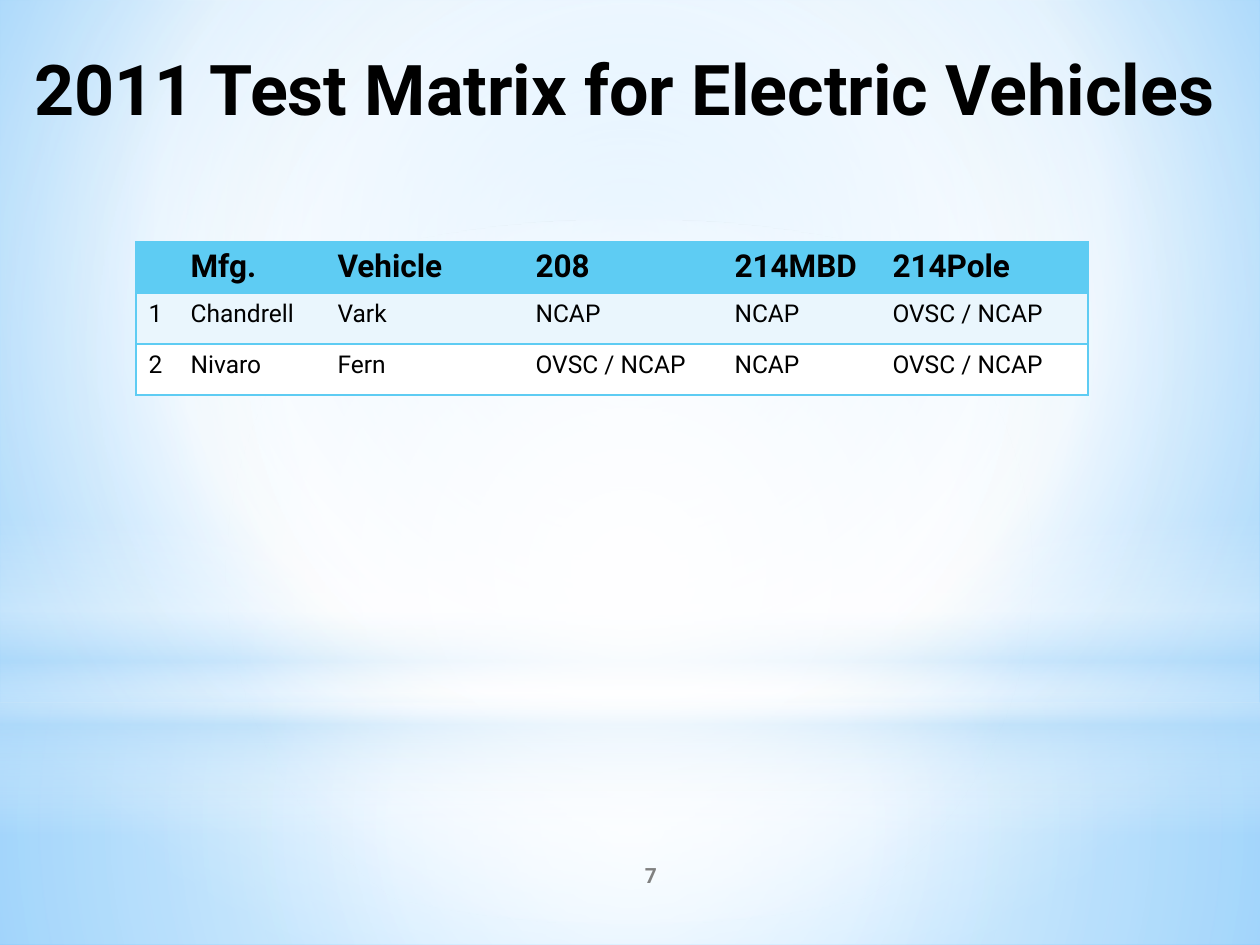
import pptx
import pptx.dml.color
import pptx.enum.shapes
import pptx.enum.text
import pptx.oxml
import pptx.oxml.ns
import pptx.util

RGBColor = pptx.dml.color.RGBColor
MSO_SHAPE = pptx.enum.shapes.MSO_SHAPE
PP_ALIGN = pptx.enum.text.PP_ALIGN
MSO_ANCHOR = pptx.enum.text.MSO_ANCHOR
qn = pptx.oxml.ns.qn
NS = pptx.oxml.ns.nsdecls("a")

BLACK = RGBColor(0x00, 0x00, 0x00)
GRAY = RGBColor(0x80, 0x80, 0x80)
WHITE = RGBColor(0xFF, 0xFF, 0xFF)
CYAN = RGBColor(0x5E, 0xCC, 0xF3)
PALE = RGBColor(0xEA, 0xF6, 0xFD)
MIST = RGBColor(0xB4, 0xDC, 0xFA)
SKY = RGBColor(0x9E, 0xD5, 0xFF)
BLUE = RGBColor(0x5B, 0xB9, 0xFF)

W, H = 1260, 945
CENTER = (50, 50, 50, 50)
COLS = (42, 147, 198, 199, 158, 208)
ROW_H = 51
ROWS = (
    ("", "Mfg.", "Vehicle", "208", "214MBD", "214Pole"),
    ("1", "Chandrell", "Vark", "NCAP", "NCAP", "OVSC / NCAP"),
    ("2", "Nivaro", "Fern", "OVSC / NCAP", "NCAP", "OVSC / NCAP"),
)


def px(n):
    return pptx.util.Emu(n * 914400 // 126)


def set_text(tf, text, size=14, bold=False, color=BLACK, align=PP_ALIGN.LEFT):
    p = tf.paragraphs[0]
    p.alignment = align
    r = p.add_run()
    r.text = text
    r.font.name = "Roboto"
    r.font.size = pptx.util.Pt(size)
    r.font.bold = bold
    r.font.color.rgb = color


def set_gradient(owner, stops, to=None):
    owner.fill.background()
    gs = "".join(
        f'<a:gs pos="{pos * 1000}"><a:srgbClr val="{color}">'
        f'<a:alpha val="{alpha * 1000}"/></a:srgbClr></a:gs>'
        for pos, color, alpha in stops
    )
    if to:
        rect = " ".join(f'{side}="{v * 1000}"' for side, v in zip("ltrb", to))
        way = f'<a:path path="circle"><a:fillToRect {rect}/></a:path>'
    else:
        way = '<a:lin ang="5400000" scaled="0"/>'
    xml = f'<a:gradFill {NS} rotWithShape="1"><a:gsLst>{gs}</a:gsLst>{way}</a:gradFill>'
    return pptx.oxml.parse_xml(xml)


def swap_fill(element, grad):
    old = element.find(".//" + qn("a:noFill"))
    old.getparent().replace(old, grad)


def add_glow(s, kind, box, stops, to=None):
    sp = s.shapes.add_shape(kind, *map(px, box))
    sp.shadow.inherit = False
    swap_fill(sp.element, set_gradient(sp, stops, to))
    sp.line.fill.background()


def add_backdrop(s, x, y, w, h):
    stops = [(0, SKY, 100), (60, WHITE, 100), (100, BLUE, 100)]
    swap_fill(s.element, set_gradient(s.background, stops, (20, 10, 20, 60)))
    rect, horizon = MSO_SHAPE.RECTANGLE, 703
    add_glow(s, rect, (x, y + horizon, w, h - horizon),
             [(0, WHITE, 91), (37, WHITE, 76), (100, MIST, 79)], CENTER)
    add_glow(s, rect, (x, y, w, horizon),
             [(0, WHITE, 89), (48, WHITE, 62), (100, MIST, 79)], CENTER)
    add_glow(s, rect, (x, y + 519, w, 315),
             [(0, WHITE, 0), (29, WHITE, 30), (45, MIST, 40),
              (55, WHITE, 26), (65, MIST, 60), (100, WHITE, 0)])
    add_glow(s, MSO_SHAPE.OVAL, (x, y + 220, w, horizon),
             [(0, WHITE, 100), (56, WHITE, 0)], CENTER)


def add_label(s, x, y, w, h, text, anchor=MSO_ANCHOR.TOP, **fmt):
    tf = s.shapes.add_textbox(px(x), px(y), px(w), px(h)).text_frame
    tf.word_wrap = True
    tf.vertical_anchor = anchor
    set_text(tf, text, align=PP_ALIGN.CENTER, **fmt)


def set_borders(cell, sides):
    tcPr = cell._tc.get_or_add_tcPr()
    for side in "LRTB":
        fill = (f'<a:solidFill><a:srgbClr val="{CYAN}"/></a:solidFill>'
                if side in sides else "<a:noFill/>")
        tcPr.append(pptx.oxml.parse_xml(f'<a:ln{side} {NS} w="12700">{fill}</a:ln{side}>'))


def add_matrix(s, x, y):
    frame = s.shapes.add_table(len(ROWS), len(COLS), px(x), px(y),
                               px(sum(COLS)), px(ROW_H * len(ROWS)))
    table = frame.table
    for col, width in zip(table.columns, COLS):
        col.width = px(width)
    for i, row in enumerate(ROWS):
        table.rows[i].height = px(ROW_H)
        for j, text in enumerate(row):
            cell = table.cell(i, j)
            edge = {0: "L", len(COLS) - 1: "R"}.get(j, "")
            set_borders(cell, "TB" + edge)
            cell.fill.solid()
            cell.fill.fore_color.rgb = (CYAN, PALE, WHITE)[i]
            if text:
                set_text(cell.text_frame, text, size=14 if i else 18, bold=i == 0)


def main():
    prs = pptx.Presentation()
    prs.slide_width, prs.slide_height = px(W), px(H)
    s = prs.slides.add_slide(prs.slide_layouts[6])
    add_backdrop(s, 0, 0, W, H)
    add_label(s, 3, 39, W, 97, "2011 Test Matrix for Electric Vehicles ", size=40, bold=True)
    add_matrix(s, 136, 242)
    add_label(s, 525, 850, 252, 50, "7", anchor=MSO_ANCHOR.MIDDLE,
              size=12, bold=True, color=GRAY)
    prs.save("out.pptx")


if __name__ == "__main__":
    main()
